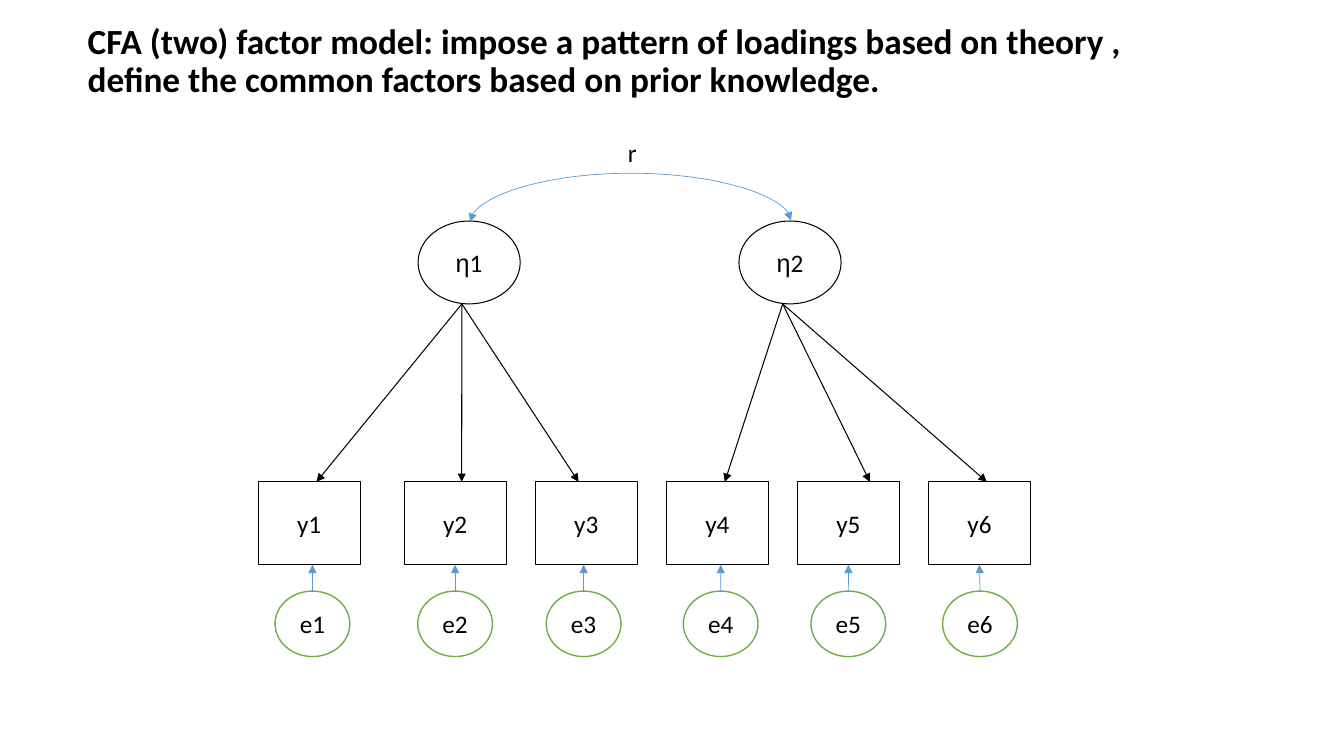
from lxml import etree
from pptx import Presentation
from pptx.dml.color import RGBColor
from pptx.enum import shapes, text
from pptx.oxml import ns
from pptx.util import Pt

BLACK, WHITE, BLUE, GREEN = "000000", "FFFFFF", "5B9BD5", "70AD47"
RECTANGLE, OVAL = shapes.MSO_SHAPE.RECTANGLE, shapes.MSO_SHAPE.OVAL


def color(value):
    return RGBColor.from_string(value)


class Diagram:
    """Draws on one slide in a shared style; all lengths are points."""

    def __init__(self, slide, font="Calibri", size=18):
        self.slide, self.font, self.size = slide, font, size

    def style(self, paragraph, size=None, bold=False):
        font = paragraph.font
        font.name, font.size, font.bold = self.font, Pt(size or self.size), bold
        font.color.rgb = color(BLACK)

    def title(self, words, left, top, width, height, size):
        title = self.slide.shapes.title
        title.left, title.top = Pt(left), Pt(top)
        title.width, title.height = Pt(width), Pt(height)
        frame = title.text_frame
        frame.text = words
        frame.auto_size = text.MSO_AUTO_SIZE.NONE
        frame.vertical_anchor = text.MSO_ANCHOR.MIDDLE
        paragraph = frame.paragraphs[0]
        paragraph.alignment, paragraph.line_spacing = text.PP_ALIGN.LEFT, 0.9
        self.style(paragraph, size, bold=True)

    def label(self, words, left, top, width, height):
        box = self.slide.shapes.add_textbox(Pt(left), Pt(top), Pt(width), Pt(height))
        box.text_frame.word_wrap = False
        box.text_frame.auto_size = text.MSO_AUTO_SIZE.SHAPE_TO_FIT_TEXT
        box.text_frame.text = words
        self.style(box.text_frame.paragraphs[0])

    def node(self, kind, words, left, top, width, height, line=BLACK, weight=0.75):
        """Add an outlined shape with centred text; Greek letters go in Arial."""
        shape = self.slide.shapes.add_shape(kind, Pt(left), Pt(top), Pt(width), Pt(height))
        shape.shadow.inherit = False
        shape.fill.solid()
        shape.fill.fore_color.rgb = color(WHITE)
        shape.line.color.rgb = color(line)
        shape.line.width = Pt(weight)
        frame = shape.text_frame
        frame.word_wrap = False
        frame.vertical_anchor = text.MSO_ANCHOR.MIDDLE
        paragraph = frame.paragraphs[0]
        paragraph.alignment = text.PP_ALIGN.CENTER
        self.style(paragraph)
        for part in (words[0], words[1:]):
            run = paragraph.add_run()
            run.text = part
            if part == "η":
                run.font.name = "Arial"
        return shape

    def arrow(self, start, end, line=BLACK, weight=0.75, curved=False):
        kind = shapes.MSO_CONNECTOR.CURVE if curved else shapes.MSO_CONNECTOR.STRAIGHT
        connector = self.slide.shapes.add_connector(kind, *map(Pt, start + end))
        connector.line.color.rgb = color(line)
        connector.line.width = Pt(weight)
        outline = connector.line._get_or_add_ln()
        for tip in ("a:headEnd", "a:tailEnd") if curved else ("a:tailEnd",):
            etree.SubElement(outline, ns.qn(tip), type="triangle")
        etree.SubElement(connector._element.spPr, ns.qn("a:effectLst"))
        return connector

    def arc(self, left, right, base, rise):
        """Add a two-headed arc: a curved connector one point wide, turned a quarter."""
        middle, half = (left + right) / 2, (right - left) / 2
        connector = self.arrow((middle + 0.5, base + half), (middle - 0.5, base - half),
                               BLUE, 0.5, curved=True)
        properties = connector._element.spPr
        properties.find(ns.qn("a:xfrm")).set("rot", str(90 * 60000))
        adjustments = properties.find(ns.qn("a:prstGeom")).get_or_add_avLst()
        etree.SubElement(adjustments, ns.qn("a:gd"), name="adj1", fmla=f"val {rise * 100000}")


def main():
    presentation = Presentation()
    presentation.slide_width, presentation.slide_height = Pt(960), Pt(540)
    diagram = Diagram(presentation.slides.add_slide(presentation.slide_layouts[5]))
    diagram.title("CFA (two) factor model: impose a pattern of loadings based on theory ,\v"
                  "define the common factors based on prior knowledge.",
                  55.4, 12.2, 828, 64.1, 25.2)

    width, height = 73, 59.2
    item_top, error_top = 344.2, 422.2
    item_lefts = [184.3] + [288.6 + 93.65 * step for step in range(5)]
    loading_ends = [226.1, 329.8, 413.3, 517.7, 621.4, 704.9]
    error_centers = [223.2, 325.1, 416.9, 514.8, 606, 700]

    items = [diagram.node(RECTANGLE, f"y{number}", left, item_top, width, height)
             for number, left in enumerate(item_lefts, 1)]

    for factor, left in enumerate((298.6, 527.8)):
        diagram.node(OVAL, f"η{factor + 1}", left, 157.9, width, height)
        for end in loading_ends[3 * factor:3 * factor + 3]:
            diagram.arrow((left + 31.3, 217.1), (end, item_top))

    diagram.arc(335.8, 565, 158, 35)
    diagram.label("r", 441.4, 94.5, 20.9, 29.1)

    for number, (item, center) in enumerate(zip(items, error_centers), 1):
        error = diagram.node(OVAL, f"e{number}", center - 26.7, error_top, 53.4, 46.8, GREEN, 1)
        arrow = diagram.arrow((center, error_top), (center, item_top + height), BLUE, 0.5)
        arrow.begin_connect(error, 0)
        if abs(item.left + item.width / 2 - Pt(center)) < Pt(1):
            arrow.end_connect(item, 2)

    presentation.save("out.pptx")


if __name__ == "__main__":
    main()
